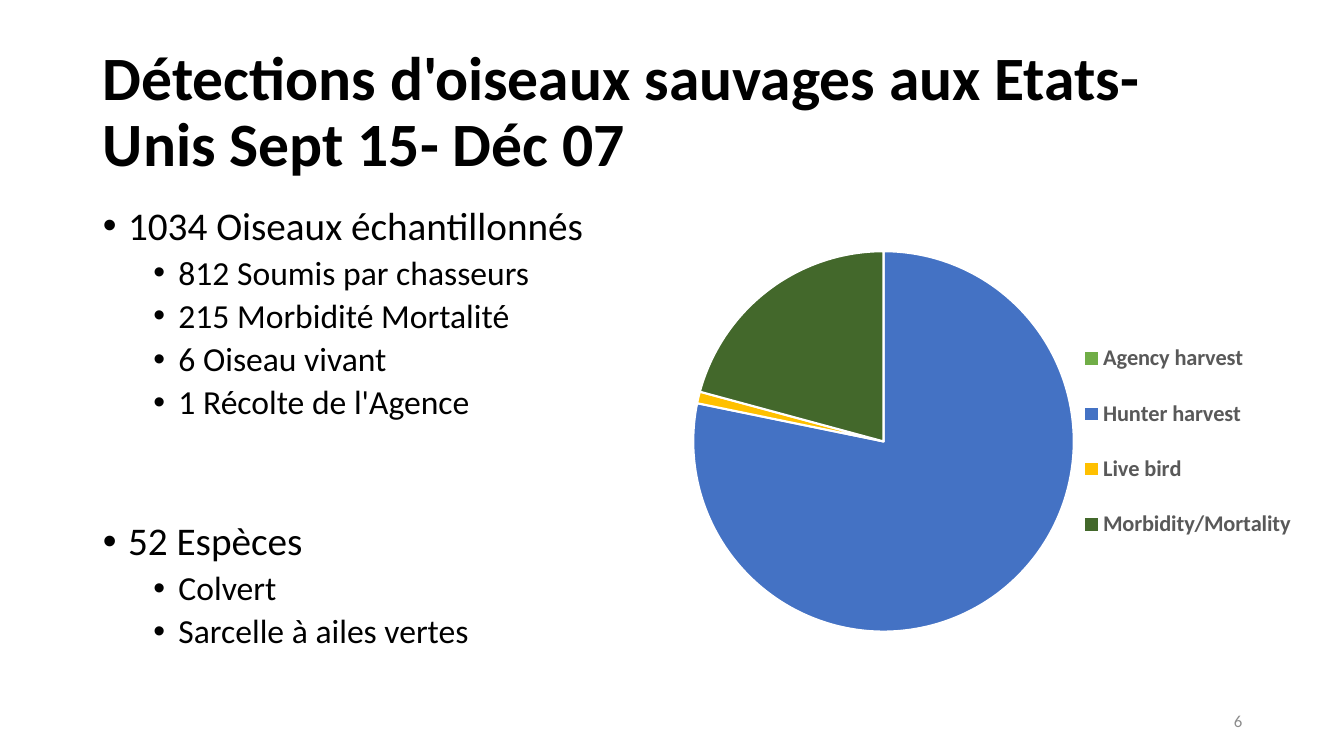
from lxml.etree import SubElement
from pptx import Presentation
from pptx.chart.data import CategoryChartData
from pptx.dml.color import RGBColor
from pptx.enum.chart import XL_CHART_TYPE as ChartType, XL_LEGEND_POSITION as LegendPosition
from pptx.enum.text import MSO_ANCHOR as Anchor, MSO_AUTO_SIZE as AutoSize, PP_ALIGN as Align
from pptx.oxml import parse_xml
from pptx.oxml.ns import nsdecls, qn
from pptx.util import Inches, Pt

FONT = "Calibri"
COLORS = {
    "text": "000000",
    "number": "8C8C8C",
    "legend": "595959",
    "border": "FFFFFF",
    "Agency harvest": "70AD47",
    "Hunter harvest": "4472C4",
    "Live bird": "FFC000",
    "Morbidity/Mortality": "43682B",
}
SHARES = {"Agency harvest": 0, "Hunter harvest": 79, "Live bird": 1, "Morbidity/Mortality": 21}
FINDINGS = [
    (0, "1034 Oiseaux échantillonnés", 0),
    (1, "812 Soumis par chasseurs", 5),
    (1, "215 Morbidité Mortalité", 5),
    (1, "6 Oiseau vivant", 5),
    (1, "1 Récolte de l'Agence", 5),
    (0, "52 Espèces", 71.5),
    (1, "Colvert", 5),
    (1, "Sarcelle à ailes vertes", 5),
]


def color(name):
    """Return the named colour."""
    return RGBColor.from_string(COLORS[name])


def set_font(font, size, color_name, bold=False):
    """Format a font."""
    font.name, font.size, font.bold = FONT, Pt(size), bold
    font.color.rgb = color(color_name)


def place(shape, left, top, width, height):
    """Move and size a shape, in inches."""
    shape.left, shape.top = Inches(left), Inches(top)
    shape.width, shape.height = Inches(width), Inches(height)


def add_bullet(paragraph, level):
    """Give a paragraph a bullet with a hanging indent."""
    paragraph.level = level
    properties = paragraph._p.get_or_add_pPr()
    properties.set("marL", str(Inches(0.25 + 0.5 * level)))
    properties.set("indent", str(Inches(-0.25)))
    SubElement(properties, qn("a:buFont"), typeface="Arial")
    SubElement(properties, qn("a:buChar"), char="•")


def fill_title(title):
    """Write the slide title."""
    place(title, 0.92, 0.4, 11.5, 1.45)
    frame = title.text_frame
    frame.text = "Détections d'oiseaux sauvages aux Etats-Unis Sept 15- Déc 07"
    frame.auto_size, frame.vertical_anchor = AutoSize.NONE, Anchor.MIDDLE
    heading = frame.paragraphs[0]
    heading.alignment, heading.line_spacing = Align.LEFT, 0.9
    set_font(heading.runs[0].font, 44, "text", True)


def fill_findings(body):
    """Write the two-level list of findings."""
    place(body, 0.92, 2, 5.67, 4.76)
    frame = body.text_frame
    frame.text = "\n".join(text for _, text, _ in FINDINGS)
    frame.auto_size, frame.vertical_anchor = AutoSize.NONE, Anchor.TOP
    for paragraph, (level, _, space) in zip(frame.paragraphs, FINDINGS):
        paragraph.line_spacing, paragraph.space_before = 0.9, Pt(space)
        add_bullet(paragraph, level)
        set_font(paragraph.runs[0].font, 28 - 4 * level, "text")


def add_page_number(slide):
    """Add the page number at the bottom right."""
    box = slide.shapes.add_textbox(Inches(9.42), Inches(6.95), Inches(3), Inches(0.4))
    frame = box.text_frame
    frame.word_wrap, frame.vertical_anchor = True, Anchor.MIDDLE
    frame.text = "6"
    frame.paragraphs[0].alignment = Align.RIGHT
    set_font(frame.paragraphs[0].runs[0].font, 12, "number")


def manual_layout(x, y, w, h, target=""):
    """Return a chart layout element in fractions of the chart area."""
    return parse_xml(
        f'<c:layout {nsdecls("c")}><c:manualLayout>{target}'
        '<c:xMode val="edge"/><c:yMode val="edge"/>'
        f'<c:x val="{x}"/><c:y val="{y}"/><c:w val="{w}"/><c:h val="{h}"/>'
        '</c:manualLayout></c:layout>'
    )


def set_layout(parent, layout):
    """Replace the layout of a chart part, keeping the schema order."""
    for old in parent.findall(qn("c:layout")):
        parent.remove(old)
    position = parent.find(qn("c:legendPos"))
    parent.insert(0 if position is None else parent.index(position) + 1, layout)


def add_source_pie(slide):
    """Add the pie of sampled birds by source, in percent."""
    data = CategoryChartData(number_format="0")
    data.categories = list(SHARES)
    data.add_series("Series 1", list(SHARES.values()))
    frame = slide.shapes.add_chart(
        ChartType.PIE, Inches(6.75), Inches(2), Inches(6.29), Inches(4.76), data
    )
    chart = frame.chart
    chart.has_title = False
    set_font(chart.font, 10, "text")
    chart.has_legend = True
    legend = chart.legend
    legend.position, legend.include_in_layout = LegendPosition.RIGHT, False
    set_font(legend.font, 16, "legend", True)
    plot = chart.plots[0]
    plot.vary_by_categories = True
    for index, source in enumerate(SHARES):
        style = plot.series[0].points[index].format
        style.fill.solid()
        style.fill.fore_color.rgb = color(source)
        style.line.color.rgb = color("border")
        style.line.width = Pt(1.5)
    area = chart._chartSpace.chart.plotArea
    set_layout(area, manual_layout(0.02, 0.1, 0.6, 0.8, '<c:layoutTarget val="inner"/>'))
    set_layout(legend._element, manual_layout(0.62, 0.24, 0.36, 0.52))


def main():
    """Build and save the slide."""
    deck = Presentation()
    deck.slide_width, deck.slide_height = Inches(13.33), Inches(7.5)
    slide = deck.slides.add_slide(deck.slide_layouts[1])
    fill_title(slide.shapes.title)
    fill_findings(slide.placeholders[1])
    add_page_number(slide)
    add_source_pie(slide)
    deck.save("out.pptx")


if __name__ == "__main__":
    main()
